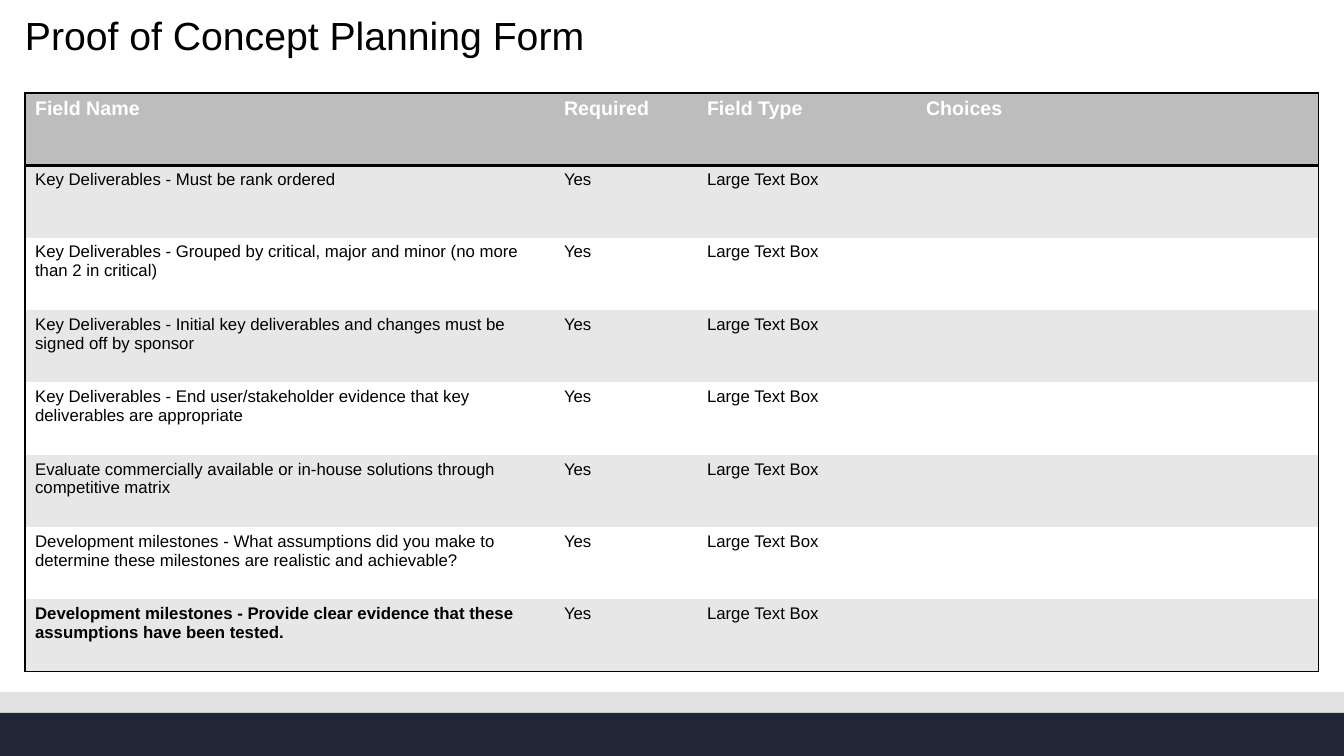
from lxml import etree
from pptx import Presentation
from pptx import util as u
from pptx.dml import color
from pptx.enum import shapes, text
from pptx.oxml import ns

WIDE, HIGH = 1344, 756
SCALE = 12192000 / WIDE
COLS = [529, 143, 219, 403]
HEAD = ["Field Name", "Required", "Field Type", "Choices"]
FIELDS = [
    "Key Deliverables - Must be rank ordered",
    "Key Deliverables - Grouped by critical, major and minor (no more than 2 in critical)",
    "Key Deliverables - Initial key deliverables and changes must be signed off by sponsor",
    "Key Deliverables - End user/stakeholder evidence that key deliverables are appropriate",
    "Evaluate commercially available or in-house solutions through competitive matrix",
    "Development milestones - What assumptions did you make to determine these milestones "
    "are realistic and achievable?",
    "Development milestones - Provide clear evidence that these assumptions have been tested.",
]


def px(n):
    """Turn px into EMU."""
    return u.Emu(round(n * SCALE))


def rgb(code):
    """Turn a hex string into a colour."""
    return color.RGBColor.from_string(code)


def style(obj, vals):
    """Set each attribute in vals on obj."""
    for key, val in vals.items():
        setattr(obj, key, val)


def write(para, words, size, ink, bold=False):
    """Put words into a paragraph as one run."""
    run = para.add_run()
    run.text = words
    style(run.font, {"name": "Arial", "size": u.Pt(size), "bold": bold})
    run.font.color.rgb = rgb(ink)


def title(slide, box, words):
    """Place the slide title in its box."""
    frame = slide.shapes.add_textbox(*map(px, box)).text_frame
    style(frame, {"word_wrap": True, "margin_left": 0, "margin_right": 0,
                  "margin_top": 0, "margin_bottom": 0,
                  "vertical_anchor": text.MSO_ANCHOR.TOP})
    frame.paragraphs[0].line_spacing = 0.9
    write(frame.paragraphs[0], words, 28, "000000")


def footer(slide, box):
    """Stack the pale and dark bands that fill the box."""
    left, top, wide, high = box
    pale = high // 3
    for y, tall, fill in [(top, pale, "E1E1E1"), (top + pale, high - pale, "212637")]:
        band = slide.shapes.add_shape(
            shapes.MSO_SHAPE.RECTANGLE, px(left), px(y), px(wide), px(tall))
        band.shadow.inherit = False
        band.fill.solid()
        band.fill.fore_color.rgb = rgb(fill)
        band.line.fill.background()


def border(cell, side, width):
    """Draw one black edge of a cell."""
    line = etree.SubElement(cell._tc.get_or_add_tcPr(), ns.qn("a:ln" + side),
                            w=str(u.Pt(width)))
    fill = etree.SubElement(line, ns.qn("a:solidFill"))
    etree.SubElement(fill, ns.qn("a:srgbClr"), val="000000")


def form(slide, box):
    """Build the planning table in its box."""
    rows = [HEAD] + [[field, "Yes", "Large Text Box", ""] for field in FIELDS]
    last, end = len(rows) - 1, len(COLS) - 1
    grid = slide.shapes.add_table(len(rows), len(COLS), *map(px, box)).table
    plain = grid._tbl.tblPr.find(ns.qn("a:tableStyleId"))
    plain.text = "{2D5ABB26-0587-4C30-8999-92F81FD0307C}"
    for col, wide in zip(grid.columns, COLS):
        col.width = px(wide)
    for r, row in enumerate(rows):
        grid.rows[r].height = px(box[3] / len(rows))
        for c, words in enumerate(row):
            cell = grid.cell(r, c)
            edges = [("L", c == 0, 1), ("R", c == end, 1), ("T", r == 0, 1),
                     ("B", r in (0, last), 2 if r == 0 else 1)]
            for side, shown, width in edges:
                if shown:
                    border(cell, side, width)
            cell.fill.solid()
            cell.fill.fore_color.rgb = rgb(
                "BDBDBD" if r == 0 else "E7E7E7" if r % 2 else "FFFFFF")
            if words:
                size, ink = (14, "FFFFFF") if r == 0 else (12, "000000")
                write(cell.text_frame.paragraphs[0], words, size, ink,
                      r == 0 or (r == last and c == 0))


def main():
    """Build and save the slide."""
    deck = Presentation()
    style(deck, {"slide_width": px(WIDE), "slide_height": px(HIGH)})
    slide = deck.slides.add_slide(deck.slide_layouts[6])
    footer(slide, (0, 692, WIDE, 64))
    title(slide, (25, 17, 1088, 58), "Proof of Concept Planning Form")
    form(slide, (25, 93, sum(COLS), 579))
    deck.save("out.pptx")


if __name__ == "__main__":
    main()
